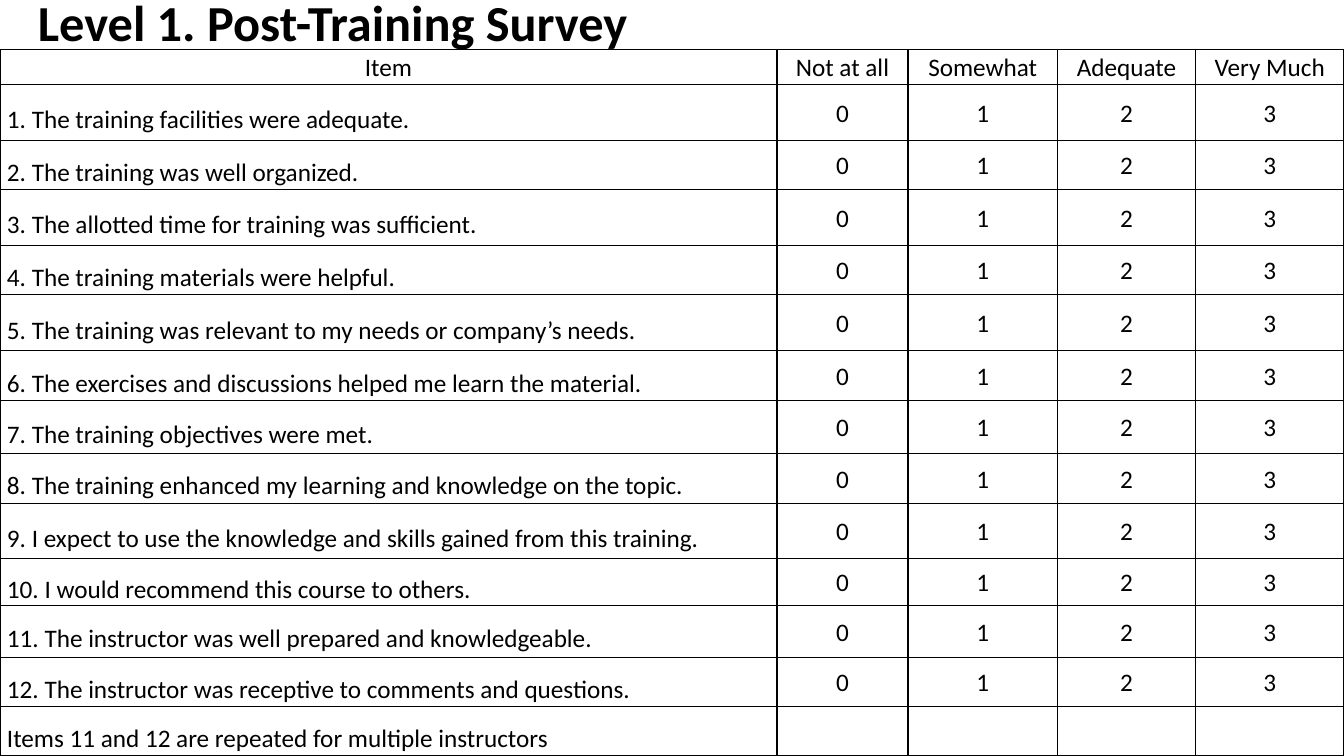
"""Build the post-training survey slide."""
import pptx
import pptx.dml.color
import pptx.enum.text
import pptx.oxml
import pptx.oxml.ns
import pptx.util

Pt = pptx.util.Pt
BLACK = pptx.dml.color.RGBColor(0, 0, 0)
ALIGN = pptx.enum.text.PP_ALIGN
MIDDLE = pptx.enum.text.MSO_ANCHOR.MIDDLE

SCALE = ["Not at all", "Somewhat", "Adequate", "Very Much"]
ITEMS = [
    "The training facilities were adequate.",
    "The training was well organized.",
    "The allotted time for training was sufficient.",
    "The training materials were helpful.",
    "The training was relevant to my needs or company’s needs.",
    "The exercises and discussions helped me learn the material.",
    "The training objectives were met.",
    "The training enhanced my learning and knowledge on the topic.",
    "I expect to use the knowledge and skills gained from this training.",
    "I would recommend this course to others.",
    "The instructor was well prepared and knowledgeable.",
    "The instructor was receptive to comments and questions.",
]
FOOTNOTE = "Items 11 and 12 are repeated for multiple instructors"
COLUMN_WIDTHS = [555, 93.6, 106.8, 98.6, 106]
ROW_HEIGHTS = [25, 40, 35.2, 40, 35.2, 40, 35.5, 37.8, 35.5, 39.5, 33.8, 36.8, 35.2, 35]


class SurveySlide:
    def __init__(self, slide, font="Calibri", color=BLACK, text_size=18):
        self.slide = slide
        self.font = font
        self.color = color
        self.text_size = text_size

    def add_span(self, para, text, size, bold=False):
        span = para.add_run()
        span.text = text
        span.font.name = self.font
        span.font.size = Pt(size)
        span.font.bold = bold
        span.font.color.rgb = self.color

    def title(self, text, left, top, width, height):
        box = self.slide.shapes.add_textbox(Pt(left), Pt(top), Pt(width), Pt(height))
        frame = box.text_frame
        frame.word_wrap = True
        frame.vertical_anchor = MIDDLE
        frame.margin_top = frame.margin_bottom = 0
        para = frame.paragraphs[0]
        para.line_spacing = 0.9
        self.add_span(para, text, 36, bold=True)

    def border(self, cell):
        properties = cell._tc.get_or_add_tcPr()
        namespace = pptx.oxml.ns.nsdecls("a")
        for side in ("lnL", "lnR", "lnT", "lnB"):
            properties.append(pptx.oxml.parse_xml(
                f'<a:{side} {namespace} w="{Pt(1)}"><a:solidFill>'
                f'<a:srgbClr val="{self.color}"/></a:solidFill></a:{side}>'))

    def cell(self, cell, text, statement):
        self.border(cell)
        cell.fill.background()
        cell.vertical_anchor = MIDDLE
        cell.margin_left = cell.margin_right = Pt(5)
        cell.margin_top = cell.margin_bottom = 0
        para = cell.text_frame.paragraphs[0]
        para.alignment = ALIGN.LEFT if statement else ALIGN.CENTER
        para.line_spacing = 1.5 if statement else 1.07
        if statement:
            para.space_before = Pt(12)
        if text:
            self.add_span(para, text, self.text_size)
        else:
            para.font.size = Pt(self.text_size)

    def table(self, rows, left, top, widths, heights):
        frame = self.slide.shapes.add_table(
            len(rows), len(widths), Pt(left), Pt(top), Pt(sum(widths)), Pt(sum(heights)))
        table = frame.table
        table.first_row = table.horz_banding = False
        for column, width in zip(table.columns, widths):
            column.width = Pt(width)
        for row, height in zip(table.rows, heights):
            row.height = Pt(height)
        for row_index, texts in enumerate(rows):
            for column_index, text in enumerate(texts):
                statement = row_index > 0 and column_index == 0
                self.cell(table.cell(row_index, column_index), text, statement)


def main():
    deck = pptx.Presentation()
    deck.slide_width, deck.slide_height = Pt(960), Pt(540)
    page = SurveySlide(deck.slides.add_slide(deck.slide_layouts[6]))
    page.title("Level 1. Post-Training Survey", 20, 0, 828, 35.3)
    scores = [str(score) for score in range(len(SCALE))]
    rows = [["Item", *SCALE]]
    rows += [[f"{number}. {item}", *scores] for number, item in enumerate(ITEMS, 1)]
    rows.append([FOOTNOTE] + [""] * len(SCALE))
    page.table(rows, 0, 35.3, COLUMN_WIDTHS, ROW_HEIGHTS)
    deck.save("out.pptx")


if __name__ == "__main__":
    main()
